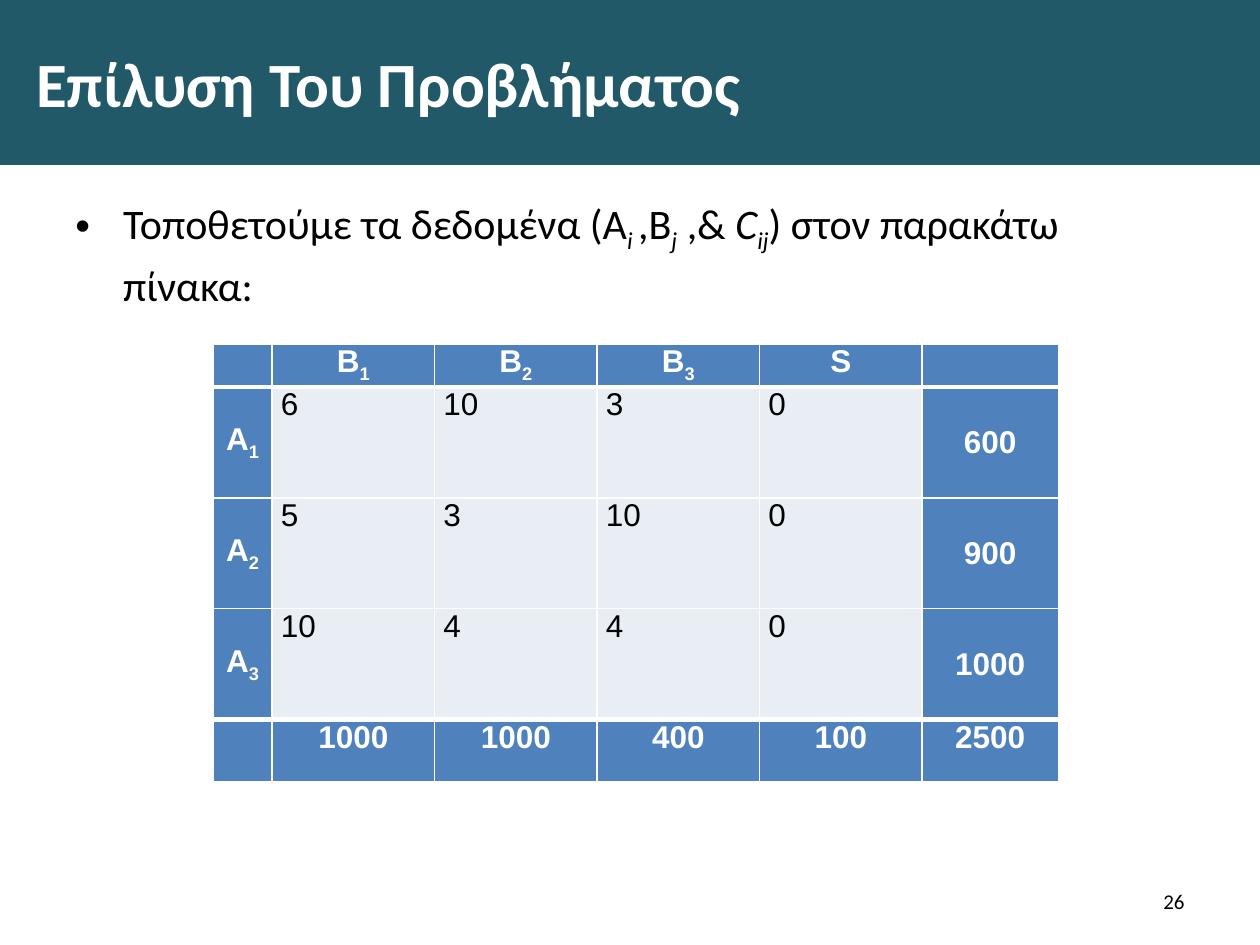
from lxml import etree
from pptx import Presentation
from pptx import util as u
from pptx.dml.color import RGBColor
from pptx.enum import shapes, text
from pptx.oxml import ns

COLORS = {"band": "215968", "head": "4F81BD", "cell": "E9EDF4", "white": "FFFFFF", "black": "000000"}


def write(para, words, size=18, font="Calibri", color="black", bold=False, italic=False, sub=False):
    span = para.add_run()
    span.text = words
    span.font.size = u.Pt(size)
    span.font.name = font
    span.font.color.rgb = RGBColor.from_string(COLORS[color])
    span.font.bold = bold
    span.font.italic = italic
    if sub:
        span.font._element.set("baseline", "-25000")


def add_border(cell, side, width, position):
    line = etree.Element(ns.qn(f"a:ln{side}"), w=str(u.Pt(width)))
    fill = etree.SubElement(line, ns.qn("a:solidFill"))
    etree.SubElement(fill, ns.qn("a:srgbClr"), val=COLORS["white"])
    cell._tc.get_or_add_tcPr().insert(position, line)


deck = Presentation()
deck.slide_width, deck.slide_height = u.Inches(10), u.Inches(7.5)
page = deck.slides.add_slide(deck.slide_layouts[6])

title = page.shapes.add_shape(shapes.MSO_SHAPE.RECTANGLE, 0, 0, u.Inches(10), u.Inches(1.31))
title.shadow.inherit = False
title.fill.solid()
title.fill.fore_color.rgb = RGBColor.from_string(COLORS["band"])
title.line.fill.background()
title.text_frame.vertical_anchor = text.MSO_ANCHOR.MIDDLE
title.text_frame.word_wrap = True
para = title.text_frame.paragraphs[0]
para.alignment = text.PP_ALIGN.LEFT
para._p.get_or_add_pPr().set("marL", str(u.Inches(0.19)))
write(para, "Επίλυση Του Προβλήματος", size=36, color="white", bold=True)

body = page.shapes.add_textbox(u.Inches(0.5), u.Inches(1.47), u.Inches(9), u.Inches(1.02))
body.text_frame.word_wrap = True
para = body.text_frame.paragraphs[0]
props = para._p.get_or_add_pPr()
props.set("marL", str(u.Inches(0.38)))
props.set("indent", str(u.Inches(-0.38)))
etree.SubElement(props, ns.qn("a:buFont"), typeface="Arial")
etree.SubElement(props, ns.qn("a:buChar"), char="•")
para.line_spacing = 1.1
for words, italic, sub in [
    ("Τοποθετούμε τα δεδομένα (Α", False, False),
    ("i ", True, True),
    (",Β", False, False),
    ("j", True, True),
    (" ,& ", False, False),
    ("C", True, False),
    ("ij", True, True),
    (") στον παρακάτω πίνακα:", False, False),
]:
    write(para, words, size=24, italic=italic, sub=sub)

number = page.shapes.add_textbox(u.Inches(7.17), u.Inches(6.95), u.Inches(2.33), u.Inches(0.4))
number.text_frame.word_wrap = True
number.text_frame.vertical_anchor = text.MSO_ANCHOR.MIDDLE
para = number.text_frame.paragraphs[0]
para.alignment = text.PP_ALIGN.RIGHT
write(para, "26", size=12)

rows = [
    ["", "Β_1", "Β_2", "Β_3", "S", ""],
    ["Α_1", "6", "10", "3", "0", "600"],
    ["Α_2", "5", "3", "10", "0", "900"],
    ["Α_3", "10", "4", "4", "0", "1000"],
    ["", "1000", "1000", "400", "100", "2500"],
]
widths = [0.47] + [1.29] * 4 + [1.08]
heights = [0.31] + [0.88] * 3 + [0.49]
last_row, last_col = len(rows) - 1, len(widths) - 1
frame = page.shapes.add_table(len(rows), len(widths), u.Inches(1.69), u.Inches(2.73),
                              u.Inches(sum(widths)), u.Inches(sum(heights)))
table = frame.table
for column, width in zip(table.columns, widths):
    column.width = u.Inches(width)
for row, height in zip(table.rows, heights):
    row.height = u.Inches(height)

for r, values in enumerate(rows):
    for c, value in enumerate(values):
        cell = table.cell(r, c)
        edge_row, edge_col = r in (0, last_row), c in (0, last_col)
        heading = edge_row or edge_col
        cell.margin_left = cell.margin_right = u.Inches(0.07)
        cell.margin_top = cell.margin_bottom = 0
        cell.fill.solid()
        cell.fill.fore_color.rgb = RGBColor.from_string(COLORS["head" if heading else "cell"])
        top = 3 if r in (1, last_row) else 1
        bottom = 3 if r in (0, last_row - 1) else 1
        for position, (side, width) in enumerate([("L", 1), ("R", 1), ("T", top), ("B", bottom)]):
            add_border(cell, side, width, position)
        if edge_col and not edge_row:
            cell.vertical_anchor = text.MSO_ANCHOR.MIDDLE
        para = cell.text_frame.paragraphs[0]
        para.font.size = u.Pt(18)
        para.alignment = text.PP_ALIGN.CENTER if heading else text.PP_ALIGN.LEFT
        for part, words in enumerate(value.split("_")):
            if words:
                write(para, words, font="Arial", color="white" if heading else "black",
                      bold=heading, sub=part == 1)

deck.save("out.pptx")
